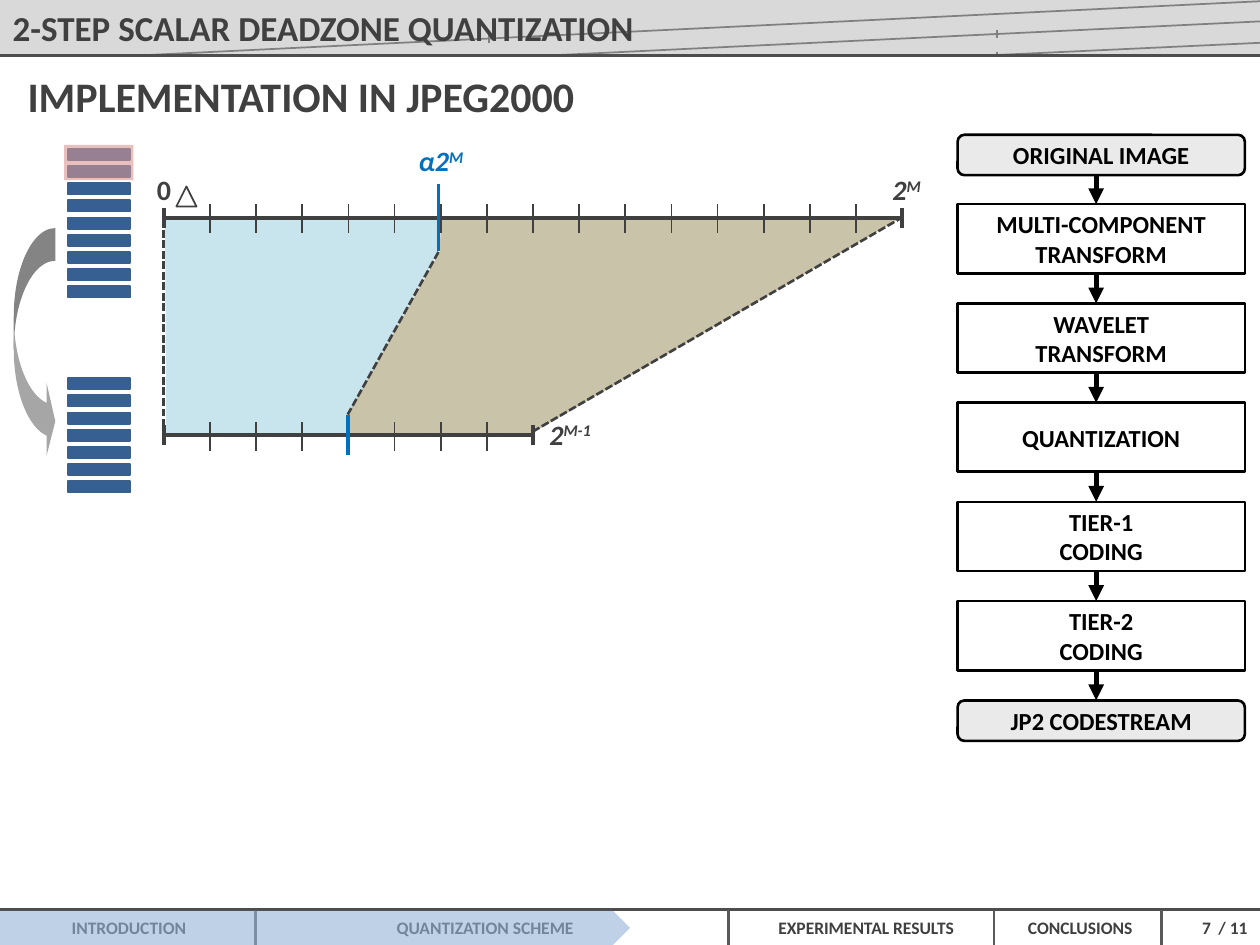
from pptx import Presentation, util as u
from pptx.dml.color import RGBColor
from pptx.enum import dml, shapes, text
from pptx.oxml import ns
from lxml import etree

INK = RGBColor(0x40, 0x40, 0x40)
BLACK = RGBColor(0, 0, 0)
RULE = RGBColor(0x4D, 0x4D, 0x4D)
DIVIDER = RGBColor(0x59, 0x59, 0x59)
BAND = RGBColor(0xD9, 0xD9, 0xD9)
TRACE = RGBColor(0x80, 0x80, 0x80)
TAN = RGBColor(0x94, 0x8A, 0x54)
AQUA = RGBColor(0x93, 0xCD, 0xDD)
ENDPOINT = RGBColor(0xEA, 0xEA, 0xEA)
BAR = RGBColor(0x37, 0x60, 0x92)
BAR_EDGE = RGBColor(0x3A, 0x5F, 0x8C)
PINK = RGBColor(0xD9, 0x96, 0x94)
SHIFT = RGBColor(0xA6, 0xA6, 0xA6)
BLUE = RGBColor(0, 0x70, 0xC0)
PROGRESS = RGBColor(0x95, 0xB3, 0xD7)
KIND = shapes.MSO_SHAPE
LEFT, CENTER, RIGHT = text.PP_ALIGN.LEFT, text.PP_ALIGN.CENTER, text.PP_ALIGN.RIGHT


class Painter:
    font = "Calibri"

    def __init__(self, slide):
        self.slide = slide
        self.shapes = slide.shapes

    def fill_text(self, frame, paragraphs, size, color=INK, align=LEFT, italic=None):
        frame.word_wrap = False
        frame.vertical_anchor = text.MSO_ANCHOR.MIDDLE
        for index, runs in enumerate(paragraphs):
            paragraph = frame.add_paragraph() if index else frame.paragraphs[0]
            paragraph.alignment = align
            for position, words in enumerate(runs):
                run = paragraph.add_run()
                run.text = words
                run.font.name = self.font
                run.font.size = u.Pt(size)
                run.font.bold = True
                run.font.italic = italic
                run.font.color.rgb = color
                if position:
                    run._r.get_or_add_rPr().set("baseline", "30000")

    def title(self, words, box, size):
        title = self.shapes.title
        title.left, title.top, title.width, title.height = map(u.Inches, box)
        title.text_frame.auto_size = text.MSO_AUTO_SIZE.NONE
        self.fill_text(title.text_frame, [[words]], size)

    def label(self, runs, box, size, **style):
        frame = self.shapes.add_textbox(*map(u.Inches, box)).text_frame
        self.fill_text(frame, [runs], size, **style)

    def paint(self, shape, fill, alpha=None, line=None, width=1):
        shape.shadow.inherit = False
        if fill is None:
            shape.fill.background()
        else:
            shape.fill.solid()
            shape.fill.fore_color.rgb = fill
        if alpha:
            color = shape.element.spPr.find(ns.qn("a:solidFill"))[0]
            etree.SubElement(color, ns.qn("a:alpha")).set("val", str(alpha * 1000))
        if line is None:
            shape.line.fill.background()
        else:
            shape.line.color.rgb = line
            shape.line.width = u.Pt(width)

    def shape(self, kind, box, fill=None, adjust=(), **style):
        shape = self.shapes.add_shape(kind, *map(u.Inches, box))
        for index, value in enumerate(adjust):
            shape.adjustments[index] = value
        self.paint(shape, fill, **style)
        return shape

    def area(self, points, fill):
        points = [(u.Inches(x), u.Inches(y)) for x, y in points]
        builder = self.shapes.build_freeform(*points[0])
        builder.add_line_segments(points[1:], close=True)
        self.paint(builder.convert_to_shape(), fill, alpha=50)

    def line(self, x1, y1, x2, y2, color=INK, width=1.0, dash=None, arrow=False):
        line = self.shapes.add_connector(
            shapes.MSO_CONNECTOR.STRAIGHT, *map(u.Inches, (x1, y1, x2, y2)))
        line.line.color.rgb = color
        line.line.width = u.Pt(width)
        if dash:
            line.line.dash_style = dash
        if arrow:
            outline = line.element.spPr.find(ns.qn("a:ln"))
            etree.SubElement(outline, ns.qn("a:tailEnd")).set("type", "triangle")
        etree.SubElement(line.element.spPr, ns.qn("a:effectLst"))

    def bars(self, top, count):
        for index in range(count):
            self.shape(KIND.RECTANGLE, (0.54, top + 0.1365 * index, 0.49, 0.09),
                       BAR, line=BAR_EDGE)

    def scale(self, y, steps, tick_top):
        start, step = 1.3, 5.86 / 16
        end = start + step * steps
        self.line(start, y, end, y, width=2.25)
        for x in (start, end):
            self.line(x, y - 0.08, x, y + 0.08, width=2.25)
        for index in range(1, steps):
            x = start + step * index
            self.line(x, tick_top, x, tick_top + 0.23)

    def stage(self, lines, top, height, kind, fill=None, adjust=()):
        box = self.shape(kind, (7.6, top, 2.28, height), fill, adjust, line=BLACK, width=1.5)
        self.fill_text(box.text_frame, [[words] for words in lines], 14, BLACK, CENTER)


def header(painter):
    painter.shape(KIND.RECTANGLE, (0, 0, 10, 0.43), BAND)
    for trace in ((1.11, 0.44, 10, 0.01), (4.37, 0.44, 10, 0.17), (7.84, 0.44, 10, 0.34),
                  (7.91, 0.24, 7.91, 0.3), (7.91, 0.41, 7.91, 0.44), (3.88, 0.27, 3.88, 0.34)):
        painter.line(*trace, color=TRACE)
    painter.line(0, 0.44, 10, 0.44, RULE, 1.5)


def footer(painter):
    painter.line(0, 7.22, 10, 7.22, RULE, 1.5)
    for section, left, width in (("INTRODUCTION", 0.47, 1.12), ("QUANTIZATION SCHEME", 3.05, 1.64),
                                 ("EXPERIMENTAL RESULTS", 6.08, 1.64), ("CONCLUSIONS", 8.06, 1.05)):
        painter.label([section], (left, 7.23, width, 0.27), 10)
    for x in (2.03, 5.78, 7.89, 9.22):
        painter.line(x, 7.22, x, 7.5, DIVIDER, 1.5)
    painter.label(["7"], (9.44, 7.23, 0.27, 0.27), 10, align=RIGHT)
    painter.label(["/ 11"], (9.56, 7.23, 0.44, 0.27), 10, align=RIGHT)
    painter.shape(KIND.PENTAGON, (0, 7.23, 5, 0.27), PROGRESS, alpha=60)


def pipeline(painter):
    first, pitch, height, gap = 1.62, 0.7875, 0.55, 0.235
    rounded = dict(kind=KIND.ROUNDED_RECTANGLE, fill=ENDPOINT, adjust=(0.167,))
    steps = (("MULTI-COMPONENT", "TRANSFORM"), ("WAVELET", "TRANSFORM"), ("QUANTIZATION",),
             ("TIER-1", "CODING"), ("TIER-2", "CODING"))
    painter.stage(["ORIGINAL IMAGE"], 1.07, 0.32, **rounded)
    for index, lines in enumerate(steps):
        painter.stage(lines, first + pitch * index, height, KIND.RECTANGLE)
    painter.stage(["JP2 CODESTREAM"], 5.56, 0.32, **rounded)
    for index in range(len(steps) + 1):
        top = first + pitch * index
        painter.line(8.7, top - gap, 8.7, top, BLACK, 3, arrow=True)


def bitplanes(painter):
    painter.bars(1.18, 9)
    painter.shape(KIND.RECTANGLE, (0.51, 1.15, 0.55, 0.28), PINK, alpha=60)
    painter.bars(3.0, 7)
    shift = painter.shape(KIND.CURVED_LEFT_ARROW, (0.11, 1.81, 0.33, 1.82), SHIFT,
                          (0.788, 1.738, 0.209))
    shift.element.spPr.find(ns.qn("a:xfrm")).set("flipH", "1")


def quantizer(painter):
    painter.area([(3.5, 1.74), (7.15, 1.73), (4.22, 3.44), (2.76, 3.44), (2.76, 3.29), (3.49, 2)], TAN)
    painter.area([(1.31, 1.72), (3.48, 1.73), (3.48, 2), (2.77, 3.29), (2.77, 3.44), (1.32, 3.45)], AQUA)
    for edge in ((1.3, 1.74, 1.3, 3.45), (7.17, 1.72, 4.22, 3.43), (3.48, 2, 2.76, 3.29)):
        painter.line(*edge, width=1.5, dash=dml.MSO_LINE.SQUARE_DOT)
    painter.scale(1.73, 16, 1.62)
    painter.scale(3.45, 8, 3.35)
    painter.line(3.48, 1.46, 3.48, 1.99, BLUE, 2.25)
    painter.line(2.76, 3.29, 2.76, 3.61, BLUE, 2.25)
    painter.shape(KIND.ISOSCELES_TRIANGLE, (1.4, 1.48, 0.16, 0.16), line=INK)
    painter.label(["0"], (1.14, 1.32, 0.32, 0.37), 16, align=CENTER)
    for runs, box, color in ((["2", "M"], (6.97, 1.32, 0.45, 0.37), INK),
                             (["α2", "M"], (3.21, 1.09, 0.58, 0.37), BLUE),
                             (["2", "M-1"], (4.24, 3.26, 0.57, 0.37), INK)):
        painter.label(runs, box, 16, color=color, align=CENTER, italic=True)


def main():
    deck = Presentation()
    deck.slide_width, deck.slide_height = u.Inches(10), u.Inches(7.5)
    painter = Painter(deck.slides.add_slide(deck.slide_layouts[5]))
    header(painter)
    title = painter.shapes.title.element
    title.getparent().append(title)
    painter.title("2-STEP SCALAR DEADZONE QUANTIZATION", (0, 0, 5.17, 0.44), 20)
    painter.label(["IMPLEMENTATION IN JPEG2000"], (0.12, 0.51, 4.58, 0.5), 24)
    quantizer(painter)
    pipeline(painter)
    bitplanes(painter)
    footer(painter)
    deck.save("out.pptx")


if __name__ == "__main__":
    main()
